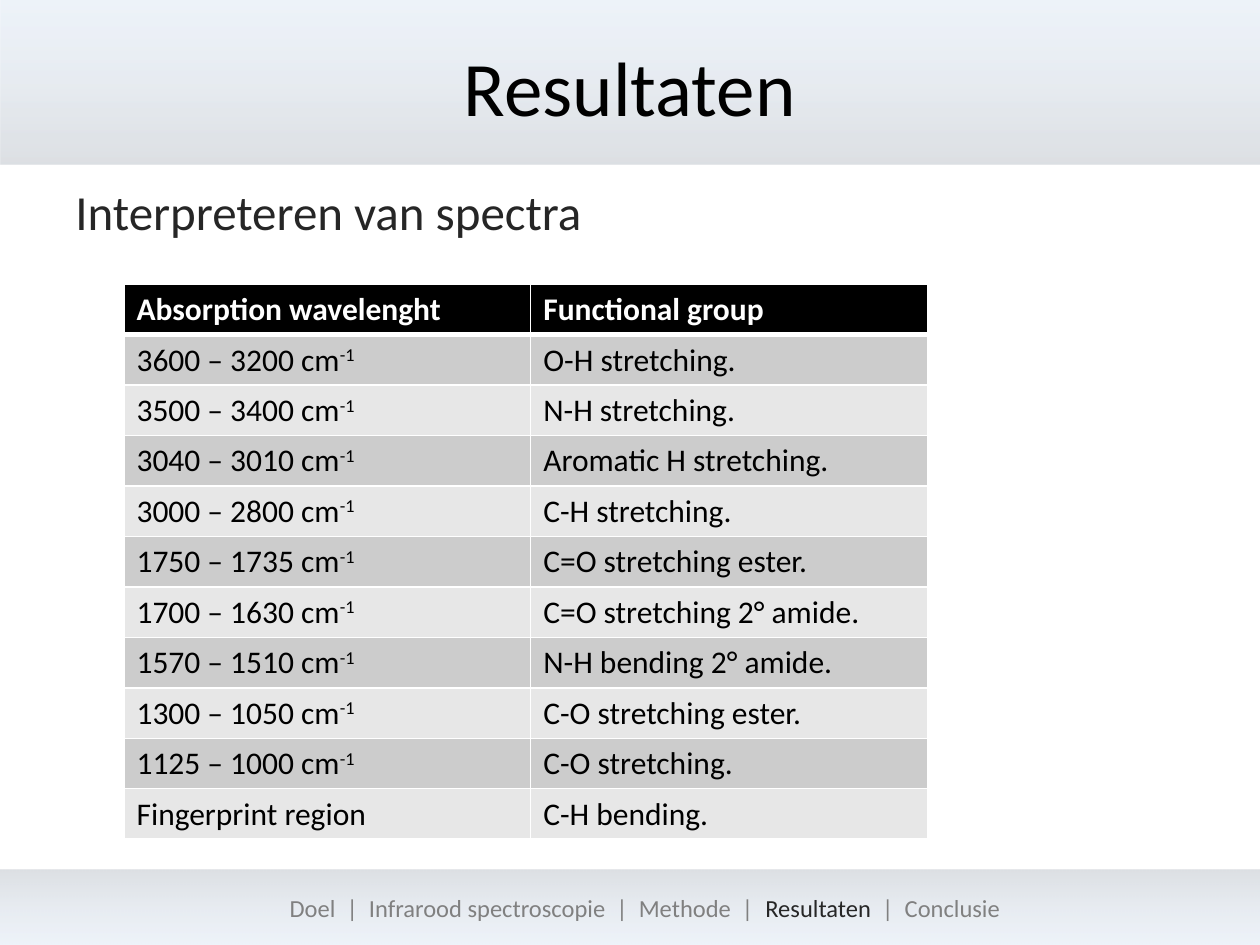
from lxml import etree
from pptx import Presentation
from pptx.dml.color import RGBColor
from pptx.enum import shapes, text
from pptx.oxml import ns
from pptx.util import Cm, Pt

# Content
TITLE = "Resultaten"
SUBTITLE = "Interpreteren van spectra"
HEADINGS = ("Absorption wavelenght", "Functional group")
ABSORPTIONS = [
    ("3600 – 3200 cm", "O-H stretching."),
    ("3500 – 3400 cm", "N-H stretching."),
    ("3040 – 3010 cm", "Aromatic H stretching."),
    ("3000 – 2800 cm", "C-H stretching."),
    ("1750 – 1735 cm", "C=O stretching ester."),
    ("1700 – 1630 cm", "C=O stretching 2° amide."),
    ("1570 – 1510 cm", "N-H bending 2° amide."),
    ("1300 – 1050 cm", "C-O stretching ester."),
    ("1125 – 1000 cm", "C-O stretching."),
    ("Fingerprint region", "C-H bending."),
]
SECTIONS = ["Doel", "Infrarood spectroscopie", "Methode", "Resultaten", "Conclusie"]
SEPARATOR = "  |  "

# Style
FONT = "Calibri"
BLACK, WHITE, DARK, GREY = "000000", "FFFFFF", "262626", "808080"
ROW_FILLS = ("CCCCCC", "E7E7E7")
BAND_STOPS = [(0, "6B7989"), (50, "99ACC3"), (100, "B5CCE8")]
BAND_OPACITY = 23

WIDTH, HEIGHT = 25.4, 19.05
FOOTER_HEIGHT = 1.52
ROW_HEIGHT = 0.94
COLUMN_WIDTHS = (8.2, 8)


def color(value):
    return RGBColor.from_string(value)


def add_run(paragraph, content, size=18, fill=BLACK, bold=False, raised=False):
    run = paragraph.add_run()
    run.text = content
    run.font.name = FONT
    run.font.size = Pt(size)
    run.font.bold = bold
    run.font.color.rgb = color(fill)
    if raised:
        run.font._element.set("baseline", "30000")


def add_text_box(slide, left, top, width, height, anchor, align):
    frame = slide.shapes.add_textbox(Cm(left), Cm(top), Cm(width), Cm(height)).text_frame
    frame.word_wrap = True
    frame.vertical_anchor = anchor
    frame.paragraphs[0].alignment = align
    return frame.paragraphs[0]


def add_band(slide, top, height, rotation=0):
    band = slide.shapes.add_shape(
        shapes.MSO_SHAPE.RECTANGLE, 0, Cm(top), Cm(WIDTH), Cm(height))
    band.rotation = rotation
    band.shadow.inherit = False
    band.line.fill.background()
    stops = "".join(
        f'<a:gs pos="{pos * 1000}"><a:srgbClr val="{value}">'
        f'<a:alpha val="{BAND_OPACITY * 1000}"/></a:srgbClr></a:gs>'
        for pos, value in BAND_STOPS)
    gradient = etree.fromstring(
        f'<a:gradFill {ns.nsdecls("a")} rotWithShape="1"><a:gsLst>{stops}</a:gsLst>'
        '<a:lin ang="5400000" scaled="0"/></a:gradFill>')
    band._element.spPr.find(ns.qn("a:prstGeom")).addnext(gradient)


def style_cell(cell, fill, bottom=1):
    # Borders come before the fill in the cell properties
    properties = cell._tc.get_or_add_tcPr()
    for side, points in (("L", 1), ("R", 1), ("T", 1), ("B", bottom)):
        properties.append(etree.fromstring(
            f'<a:ln{side} {ns.nsdecls("a")} w="{Pt(points)}"><a:solidFill>'
            f'<a:srgbClr val="{WHITE}"/></a:solidFill></a:ln{side}>'))
    cell.fill.solid()
    cell.fill.fore_color.rgb = color(fill)


def add_absorption_table(slide):
    table = slide.shapes.add_table(
        len(ABSORPTIONS) + 1, len(HEADINGS), Cm(2.5), Cm(5.73),
        Cm(sum(COLUMN_WIDTHS)), Cm(ROW_HEIGHT * (len(ABSORPTIONS) + 1))).table
    for column, width in zip(table.columns, COLUMN_WIDTHS):
        column.width = Cm(width)
    for c, heading in enumerate(HEADINGS):
        cell = table.cell(0, c)
        style_cell(cell, BLACK, bottom=3)
        add_run(cell.text_frame.paragraphs[0], heading, fill=WHITE, bold=True)
    for r, absorption in enumerate(ABSORPTIONS, start=1):
        for c, content in enumerate(absorption):
            cell = table.cell(r, c)
            style_cell(cell, ROW_FILLS[(r - 1) % 2])
            paragraph = cell.text_frame.paragraphs[0]
            add_run(paragraph, content)
            if content.endswith(" cm"):
                add_run(paragraph, "-1", raised=True)


def main():
    deck = Presentation()
    deck.slide_width, deck.slide_height = Cm(WIDTH), Cm(HEIGHT)
    slide = deck.slides.add_slide(deck.slide_layouts[6])
    middle, top = text.MSO_ANCHOR.MIDDLE, text.MSO_ANCHOR.TOP
    center, left = text.PP_ALIGN.CENTER, text.PP_ALIGN.LEFT

    # Header
    add_band(slide, 0, 3.32, rotation=180)
    add_run(add_text_box(slide, 1.27, 0.13, 22.86, 3.18, middle, center), TITLE, size=44)

    # Body
    add_run(add_text_box(slide, 1.27, 3.53, 22.86, 1.6, top, left),
            SUBTITLE, size=28, fill=DARK)
    add_absorption_table(slide)

    # Footer with the current section highlighted
    add_band(slide, HEIGHT - FOOTER_HEIGHT, FOOTER_HEIGHT)
    trail = add_text_box(slide, 1.9, 17.6, 22.2, 1.4, middle, center)
    for i, section in enumerate(SECTIONS):
        if i:
            add_run(trail, SEPARATOR, size=14, fill=GREY)
        add_run(trail, section, size=14, fill=DARK if section == TITLE else GREY)

    deck.save("out.pptx")


if __name__ == "__main__":
    main()
